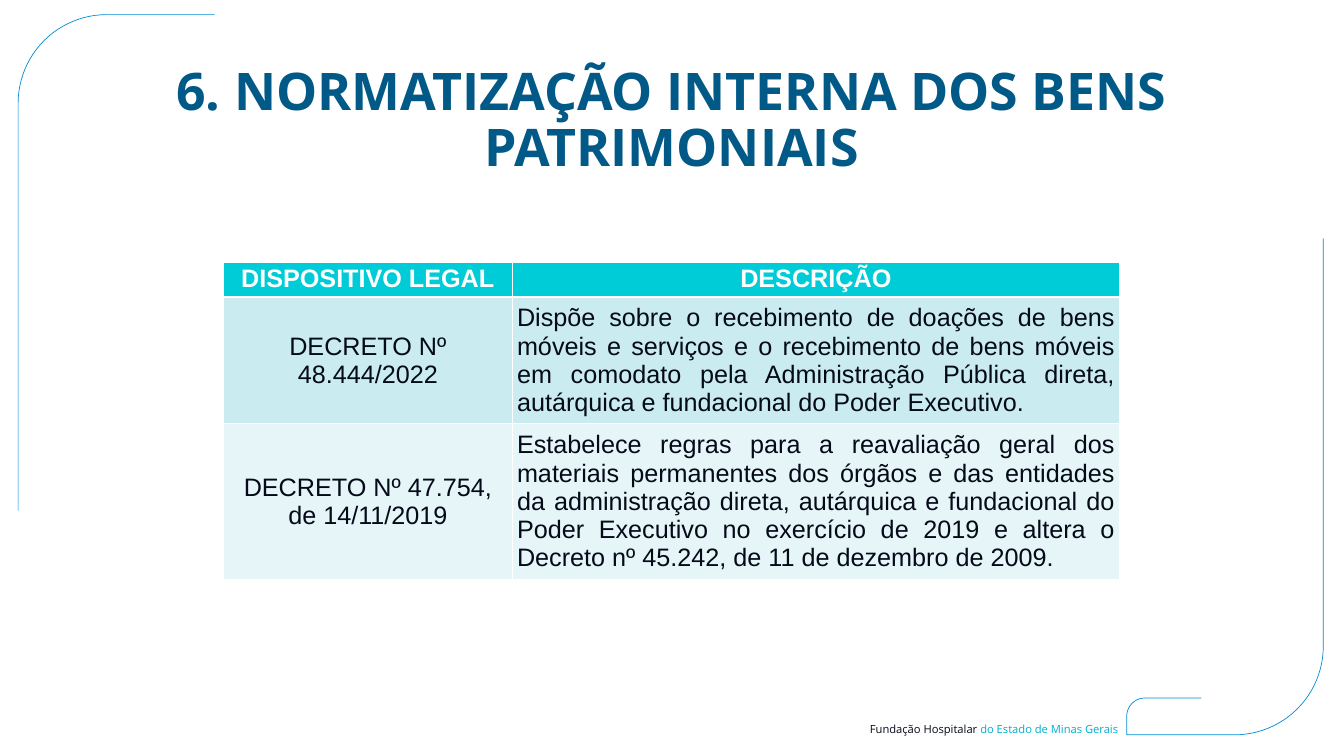
from math import cos, radians, sin

from lxml.etree import SubElement
from pptx import Presentation
from pptx.dml.color import RGBColor
from pptx.enum.text import MSO_ANCHOR as Anchor, MSO_AUTO_SIZE as AutoSize, PP_ALIGN as Align
from pptx.oxml.ns import qn
from pptx.util import Inches, Pt

COLORS = {
    "white": "FFFFFF", "ink": "050A19", "title": "005986", "frame": "008BD2",
    "accent": "00AFD2", "header": "00CCD7", "band_dark": "CAECF0", "band_light": "E6F6F8",
}
HEADERS = ["DISPOSITIVO LEGAL", "DESCRIÇÃO"]
DECREES = [
    ["DECRETO Nº 48.444/2022",
     "Dispõe sobre o recebimento de doações de bens móveis e serviços e o recebimento de bens "
     "móveis em comodato pela Administração Pública direta, autárquica e fundacional do Poder "
     "Executivo."],
    ["DECRETO Nº 47.754, de 14/11/2019",
     "Estabelece regras para a reavaliação geral dos materiais permanentes dos órgãos e das "
     "entidades da administração direta, autárquica e fundacional do Poder Executivo no exercício "
     "de 2019 e altera o Decreto nº 45.242, de 11 de dezembro de 2009."],
]
COLUMN_WIDTHS = [5.72, 12.06]
ROW_HEIGHTS = [0.63, 2.35, 2.89]


def color(name):
    return RGBColor.from_string(COLORS[name])


def add_span(para, text, font, size, color_name, bold=False):
    span = para.add_run()
    span.text = text
    span.font.name = font
    span.font.size = Pt(size)
    span.font.bold = bold
    span.font.color.rgb = color(color_name)


def clear_margins(frame):
    frame.margin_left = frame.margin_right = frame.margin_top = frame.margin_bottom = 0


def corner(center_x, center_y, radius, start, steps=24):
    angles = [radians(start + 90 * step / steps) for step in range(steps + 1)]
    return [(center_x + radius * cos(a), center_y + radius * sin(a)) for a in angles]


def add_frame_line(page, points):
    places = [(Inches(x), Inches(y)) for x, y in points]
    builder = page.shapes.build_freeform(*places[0], scale=1.0)
    builder.add_line_segments(places[1:], close=False)
    outline = builder.convert_to_shape()
    outline.shadow.inherit = False
    outline.fill.background()
    outline.line.color.rgb = color("frame")
    outline.line.width = Pt(1)


def set_title(page, text):
    title = page.shapes.title
    title.left, title.top, title.width, title.height = map(Inches, (1.83, 1.3, 23, 1.27))
    frame = title.text_frame
    clear_margins(frame)
    frame.word_wrap = True
    frame.auto_size = AutoSize.NONE
    frame.vertical_anchor = Anchor.TOP
    para = frame.paragraphs[0]
    para.alignment = Align.CENTER
    para.line_spacing = 0.9
    add_span(para, text, "Open Sans", 74, "title", bold=True)


def add_footer(page):
    box = page.shapes.add_textbox(*map(Inches, (16.57, 14.33, 5.62, 0.27)))
    frame = box.text_frame
    clear_margins(frame)
    frame.word_wrap = True
    para = frame.paragraphs[0]
    para.alignment = Align.RIGHT
    add_span(para, "Fundação Hospitalar ", "Open Sans", 16, "ink")
    add_span(para, "do Estado de Minas Gerais", "Open Sans", 16, "accent")


def set_borders(cell, bottom_width):
    properties = cell._tc.get_or_add_tcPr()
    for side, width in (("L", 1), ("R", 1), ("T", 1), ("B", bottom_width)):
        line = SubElement(properties, qn(f"a:ln{side}"), w=str(Pt(width)))
        fill = SubElement(line, qn("a:solidFill"))
        SubElement(fill, qn("a:srgbClr"), val=COLORS["white"])


def fill_cell(cell, text, fill, text_color, align, anchor, is_header):
    set_borders(cell, 3 if is_header else 1)
    cell.fill.solid()
    cell.fill.fore_color.rgb = color(fill)
    cell.vertical_anchor = anchor
    para = cell.text_frame.paragraphs[0]
    para.alignment = align
    add_span(para, text, "Arial", 36, text_color, bold=is_header)


def add_decree_table(page):
    table = page.shapes.add_table(
        len(ROW_HEIGHTS), len(COLUMN_WIDTHS), Inches(4.44), Inches(5.2),
        Inches(sum(COLUMN_WIDTHS)), Inches(sum(ROW_HEIGHTS))).table
    for column, width in zip(table.columns, COLUMN_WIDTHS):
        column.width = Inches(width)
    for row, height in zip(table.rows, ROW_HEIGHTS):
        row.height = Inches(height)
    for index, text in enumerate(HEADERS):
        fill_cell(table.cell(0, index), text, "header", "white", Align.CENTER, Anchor.TOP, True)
    for row, (decree, fill) in enumerate(zip(DECREES, ("band_dark", "band_light")), start=1):
        for index, (text, align) in enumerate(zip(decree, (Align.CENTER, Align.JUSTIFY))):
            fill_cell(table.cell(row, index), text, fill, "ink", align, Anchor.MIDDLE, False)


def main():
    deck = Presentation()
    deck.slide_width, deck.slide_height = Inches(26.67), Inches(15)
    page = deck.slides.add_slide(deck.slide_layouts[5])
    page.background.fill.solid()
    page.background.fill.fore_color.rgb = color("white")
    add_frame_line(page, [(26.26, 4.73), *corner(24.5, 12.82, 1.76, 0), (22.36, 14.58),
                          *corner(22.72, 14.21, 0.36, 180), (23.84, 13.85)])
    add_footer(page)
    add_frame_line(page, [(0.36, 10.13), *corner(2.12, 2.05, 1.76, 180), (4.26, 0.29)])
    set_title(page, "6. NORMATIZAÇÃO INTERNA DOS BENS PATRIMONIAIS")
    add_decree_table(page)
    deck.save("out.pptx")


if __name__ == "__main__":
    main()
